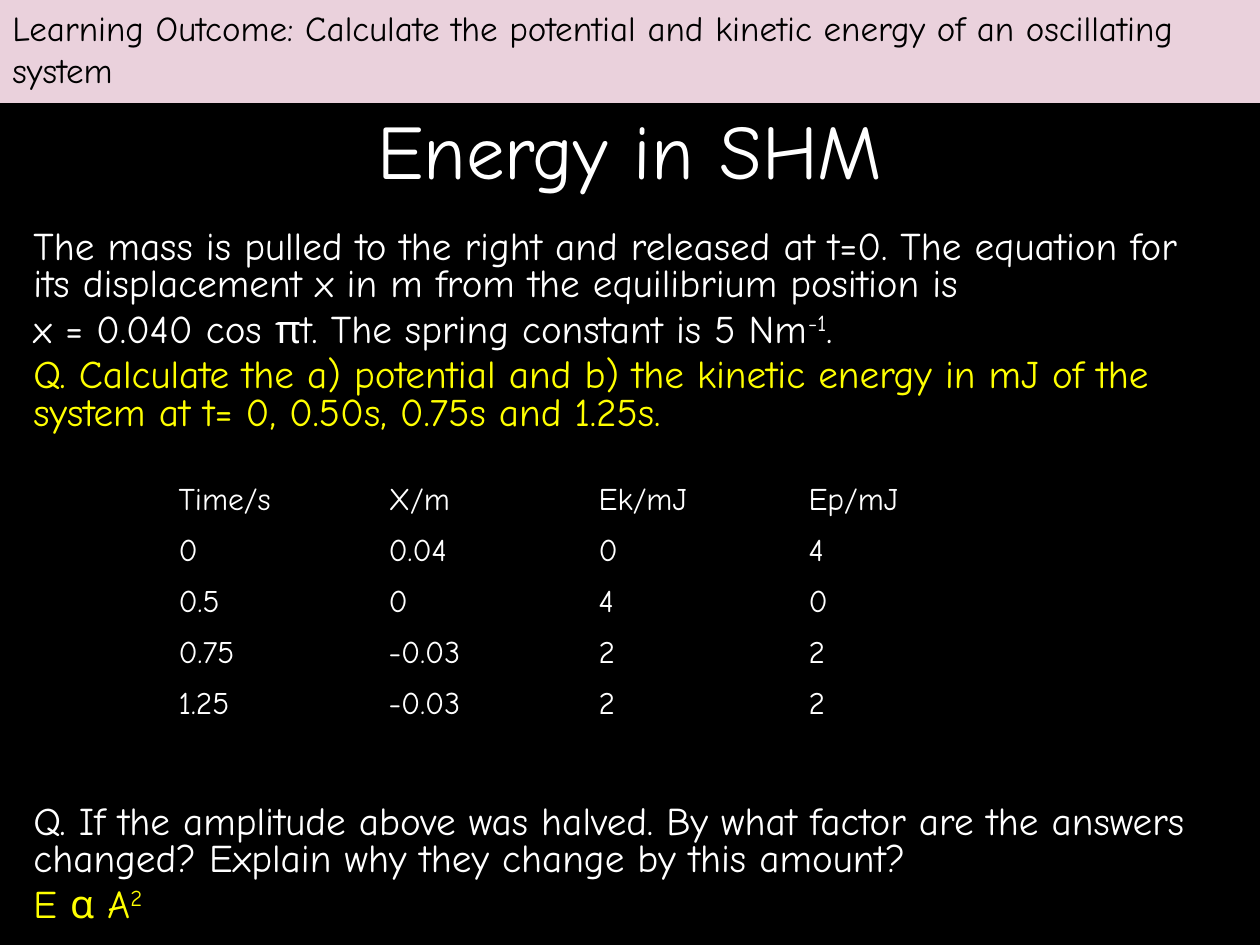
from pptx import Presentation
from pptx.dml.color import RGBColor
from pptx.enum.shapes import MSO_SHAPE
from pptx.enum.text import MSO_ANCHOR, PP_ALIGN
from pptx.util import Emu, Pt

COLOURS = {"black": "000000", "white": "FFFFFF", "yellow": "FFFF00", "pink": "EAD1DC"}
FONT = "Comic Neue"
PLAIN_TABLE_STYLE = "{2D5ABB26-0587-4C30-8999-92F81FD0307C}"

OUTCOME = ("Learning Outcome: Calculate the potential and kinetic energy "
           "of an oscillating system")
PROBLEM = [
    ("white", ["The mass is pulled to the right and released at t=0. The equation for "
               "its displacement x in m from the equilibrium position is"]),
    ("white", ["x = 0.040 cos πt. The spring constant is 5 Nm", "-1", "."]),
    ("yellow", ["Q. Calculate the a) potential and b) the kinetic energy in mJ of the "
                "system at t= 0, 0.50s, 0.75s and 1.25s."]),
]
FOLLOW_UP = [
    ("white", ["Q. If the amplitude above was halved. By what factor are the answers "
               "changed? Explain why they change by this amount?"]),
    ("yellow", ["E α A", "2"]),
]
ENERGIES = [
    ["Time/s", "X/m", "Ek/mJ", "Ep/mJ"],
    ["0", "0.04", "0", "4"],
    ["0.5", "0", "4", "0"],
    ["0.75", "-0.03", "2", "2"],
    ["1.25", "-0.03", "2", "2"],
]


def px(length):
    """Turn pixels into EMU."""
    return Emu(round(length * 914400 / 126))


def colour(name):
    """Look up a named colour."""
    return RGBColor.from_string(COLOURS[name])


def write(para, pieces, size, ink):
    """Fill a paragraph with pieces, every second one raised."""
    para.font.name = FONT
    para.font.size = Pt(size)
    para.font.color.rgb = colour(ink)
    for index, piece in enumerate(pieces):
        span = para.add_run()
        span.text = piece
        if index % 2:
            span.font._element.set("baseline", "30000")


def add_banner(page, box):
    """Draw the learning outcome bar."""
    bar = page.shapes.add_shape(MSO_SHAPE.RECTANGLE, *map(px, box))
    bar.shadow.inherit = False
    bar.fill.solid()
    bar.fill.fore_color.rgb = colour("pink")
    bar.line.fill.background()
    frame = bar.text_frame
    frame.word_wrap = True
    frame.vertical_anchor = MSO_ANCHOR.TOP
    para = frame.paragraphs[0]
    para.alignment = PP_ALIGN.LEFT
    write(para, [OUTCOME], 20, "black")


def add_title(page, box):
    """Place the centred title."""
    frame = page.shapes.add_textbox(*map(px, box)).text_frame
    frame.word_wrap = True
    frame.vertical_anchor = MSO_ANCHOR.MIDDLE
    para = frame.paragraphs[0]
    para.alignment = PP_ALIGN.CENTER
    write(para, ["Energy in SHM"], 44, "white")


def add_passage(page, box, passage):
    """Place a block of tightly spaced paragraphs."""
    frame = page.shapes.add_textbox(*map(px, box)).text_frame
    frame.word_wrap = True
    for index, (ink, pieces) in enumerate(passage):
        para = frame.add_paragraph() if index else frame.paragraphs[0]
        para.line_spacing = 0.8
        para.space_before = Pt(4.5)
        write(para, pieces, 22.4, ink)


def add_energy_table(page, box):
    """Place the energy table without fills or borders."""
    table = page.shapes.add_table(len(ENERGIES), len(ENERGIES[0]), *map(px, box)).table
    table.first_row = table.horz_banding = False
    table._tbl.tblPr[0].text = PLAIN_TABLE_STYLE
    for row, values in enumerate(ENERGIES):
        for column, value in enumerate(values):
            cell = table.cell(row, column)
            cell.fill.background()
            write(cell.text_frame.paragraphs[0], [value], 18, "white")


def main():
    """Build and save the slide."""
    deck = Presentation()
    deck.slide_width, deck.slide_height = px(1260), px(945)
    page = deck.slides.add_slide(deck.slide_layouts[6])
    page.background.fill.solid()
    page.background.fill.fore_color.rgb = colour("black")
    add_title(page, (63, 84, 1134, 130))
    add_passage(page, (21, 224, 1215, 220), PROBLEM)
    add_passage(page, (21, 799, 1215, 146), FOLLOW_UP)
    add_banner(page, (0, 0, 1260, 103))
    add_energy_table(page, (166, 476, 840, 255))
    deck.save("out.pptx")


if __name__ == "__main__":
    main()
